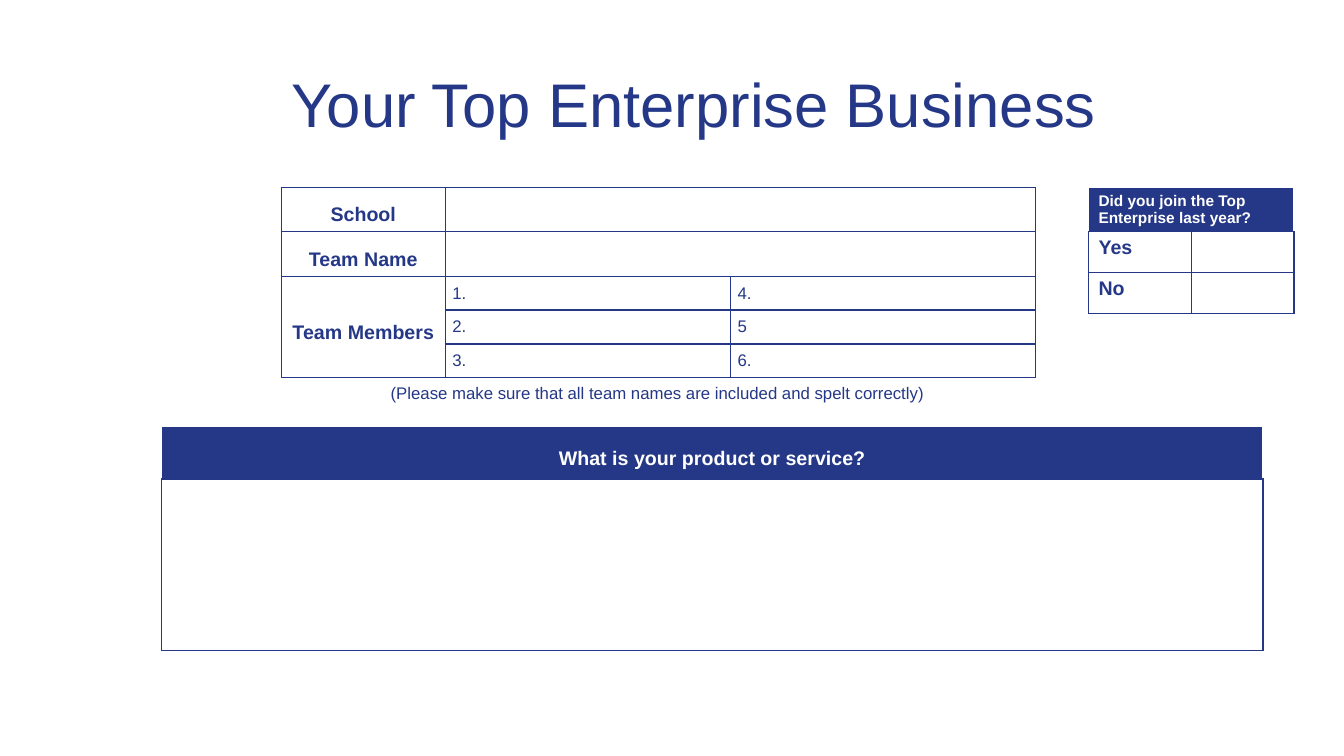
from dataclasses import dataclass
from lxml.etree import SubElement
from pptx import Presentation
from pptx.dml.color import RGBColor
from pptx.enum.text import MSO_ANCHOR, MSO_AUTO_SIZE, PP_ALIGN
from pptx.oxml.ns import qn
from pptx.util import Cm, Pt


@dataclass(frozen=True)
class Theme:
    font: str = "Arial"
    navy: str = "253887"
    white: str = "FFFFFF"
    title: int = 44
    heading: int = 14
    body: int = 12
    small: int = 11
    border: int = 1


@dataclass(frozen=True)
class Box:
    left: float
    top: float
    width: float
    height: float

    def lengths(self):
        return [Cm(value) for value in (self.left, self.top, self.width, self.height)]


THEME = Theme()
NAVY_BORDERS = dict.fromkeys("LRTB", THEME.navy)
HEADER_BORDERS = dict.fromkeys("LRT", THEME.white) | {"B": THEME.navy}


def add_text(paragraph, text, size, color=THEME.navy, bold=False):
    run = paragraph.add_run()
    run.text = text
    run.font.name = THEME.font
    run.font.size = Pt(size)
    run.font.bold = bold
    run.font.color.rgb = RGBColor.from_string(color)


def style_cell(cell, borders=NAVY_BORDERS, fill=None):
    properties = cell._tc.get_or_add_tcPr()
    for side, color in borders.items():
        line = SubElement(properties, qn(f"a:ln{side}"), w=str(Pt(THEME.border)))
        solid = SubElement(line, qn("a:solidFill"))
        SubElement(solid, qn("a:srgbClr"), val=color)
    if fill:
        cell.fill.solid()
        cell.fill.fore_color.rgb = RGBColor.from_string(fill)
    else:
        cell.fill.background()


def tighten(cell):
    cell.vertical_anchor = MSO_ANCHOR.MIDDLE
    cell.margin_left = cell.margin_right = Cm(0.18)
    cell.margin_top = cell.margin_bottom = 0


def write_heading(cell, text, color=THEME.navy):
    tighten(cell)
    paragraph = cell.text_frame.paragraphs[0]
    paragraph.alignment = PP_ALIGN.CENTER
    paragraph.line_spacing = 1.5
    paragraph.space_after = Pt(6)
    add_text(paragraph, text, THEME.heading, color, True)


def add_grid(slide, box, widths, heights):
    table = slide.shapes.add_table(len(heights), len(widths), *box.lengths()).table
    table.first_row = table.horz_banding = False
    for column, width in zip(table.columns, widths):
        column.width = Cm(width)
    for row, height in zip(table.rows, heights):
        row.height = Cm(height)
    return table


def add_title(slide, box):
    title = slide.shapes.title
    title.left, title.top, title.width, title.height = box.lengths()
    frame = title.text_frame
    frame.auto_size = MSO_AUTO_SIZE.NONE
    frame.vertical_anchor = MSO_ANCHOR.MIDDLE
    paragraph = frame.paragraphs[0]
    paragraph.alignment = PP_ALIGN.LEFT
    paragraph.line_spacing = 0.9
    add_text(paragraph, "Your Top Enterprise Business", THEME.title)


def add_team_table(slide, box):
    label_width, first_width = 4.13, 7.19
    heading_height = 1.12
    member_height = (box.height - 2 * heading_height) / 3
    widths = [label_width, first_width, box.width - label_width - first_width]
    table = add_grid(slide, box, widths, [heading_height] * 2 + [member_height] * 3)
    for cell in table.iter_cells():
        style_cell(cell)
        tighten(cell)
    for row, label in enumerate(["School", "Team Name", "Team Members"]):
        write_heading(table.cell(row, 0), label)
    for row in range(2):
        table.cell(row, 1).merge(table.cell(row, 2))
    table.cell(2, 0).merge(table.cell(4, 0))
    for row, numbers in enumerate([("1.", "4."), ("2.", "5"), ("3.", "6.")], 2):
        for column, number in enumerate(numbers, 1):
            paragraph = table.cell(row, column).text_frame.paragraphs[0]
            paragraph.space_after = Pt(6)
            add_text(paragraph, number, THEME.body)


def add_product_table(slide, box):
    header_height = 1.32
    table = add_grid(slide, box, [box.width], [header_height, box.height - header_height])
    header, answer = table.iter_cells()
    style_cell(header, HEADER_BORDERS, THEME.navy)
    write_heading(header, "What is your product or service?", THEME.white)
    style_cell(answer, fill=THEME.white)


def add_survey_table(slide, box):
    table = add_grid(slide, box, [box.width / 2] * 2, [box.height / 3] * 3)
    for index, cell in enumerate(table.iter_cells()):
        if index < 2:
            style_cell(cell, HEADER_BORDERS, THEME.navy)
        else:
            style_cell(cell)
    question = table.cell(0, 0)
    question.merge(table.cell(0, 1))
    add_text(question.text_frame.paragraphs[0], "Did you join the Top Enterprise last year?",
             THEME.small, THEME.white, True)
    for row, answer in enumerate(["Yes", "No"], 1):
        paragraph = table.cell(row, 0).text_frame.paragraphs[0]
        add_text(paragraph, answer, THEME.heading, bold=True)


def add_note(slide, box):
    frame = slide.shapes.add_textbox(*box.lengths()).text_frame
    frame.word_wrap = True
    frame.auto_size = MSO_AUTO_SIZE.SHAPE_TO_FIT_TEXT
    paragraph = frame.paragraphs[0]
    paragraph.alignment = PP_ALIGN.CENTER
    add_text(paragraph, "(Please make sure that all team names are included and spelt correctly)",
             THEME.body)


def main():
    presentation = Presentation()
    presentation.slide_width = Cm(33.87)
    presentation.slide_height = Cm(19.05)
    slide = presentation.slides.add_slide(presentation.slide_layouts[5])
    add_title(slide, Box(7.09, 0.86, 25.4, 3.68))
    add_team_table(slide, Box(7.09, 4.72, 19, 4.8))
    add_product_table(slide, Box(4.07, 10.75, 27.76, 5.65))
    add_survey_table(slide, Box(27.43, 4.72, 5.18, 3.09))
    add_note(slide, Box(9.55, 9.53, 14.05, 0.77))
    presentation.save("out.pptx")


if __name__ == "__main__":
    main()
